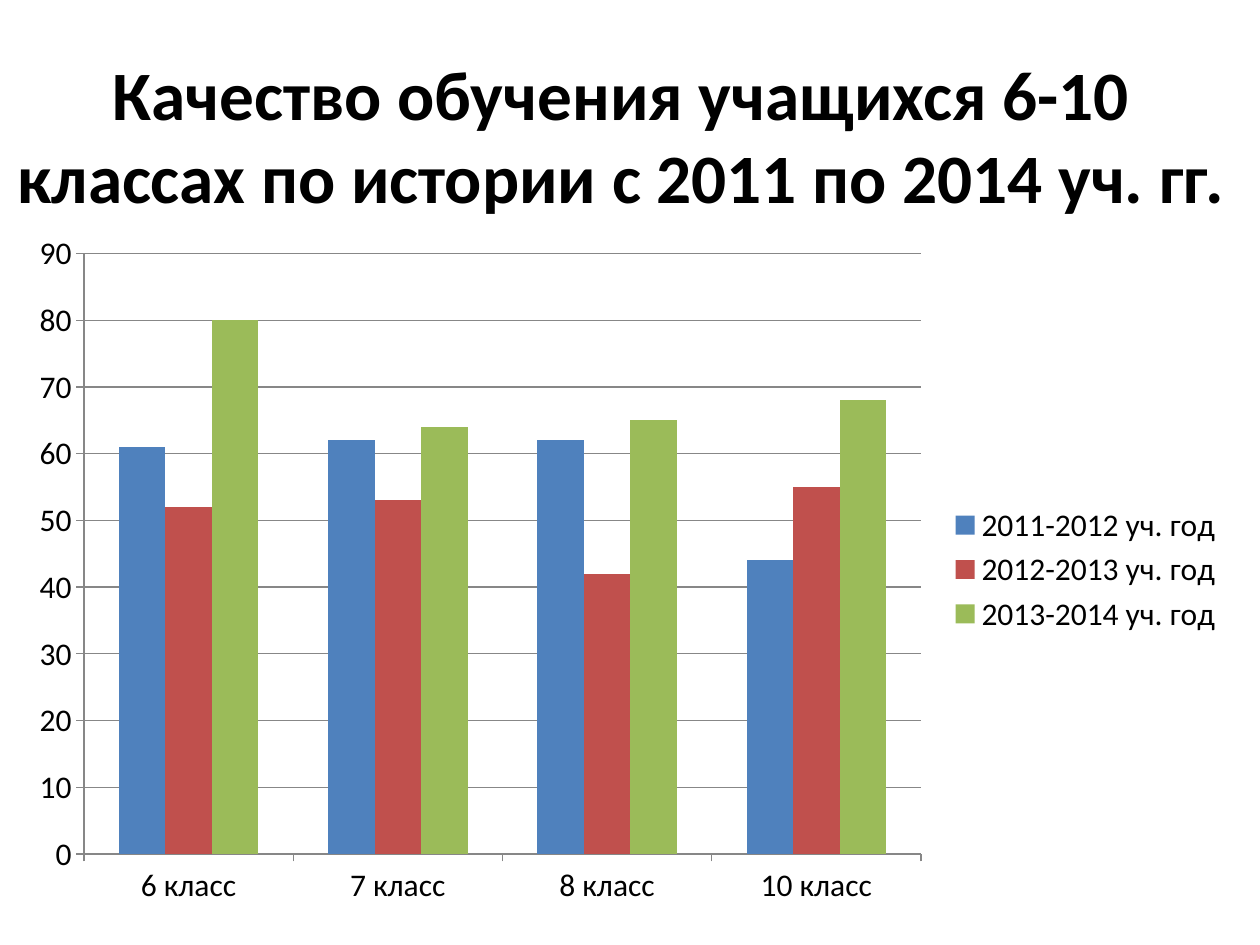
from pptx import Presentation
from pptx.chart.data import CategoryChartData
from pptx.dml.color import RGBColor
from pptx.enum.chart import XL_CHART_TYPE, XL_LEGEND_POSITION, XL_TICK_MARK
from pptx.enum.text import MSO_ANCHOR, PP_ALIGN
from pptx.util import Inches, Pt

BARS = XL_CHART_TYPE.COLUMN_CLUSTERED
RIGHT = XL_LEGEND_POSITION.RIGHT
OUT = XL_TICK_MARK.OUTSIDE
MID = MSO_ANCHOR.MIDDLE
CENTER = PP_ALIGN.CENTER

TITLE = "Качество обучения учащихся 6-10 классах по истории с 2011 по 2014 уч. гг."
GRADES = ["6 класс", "7 класс", "8 класс", "10 класс"]
YEARS = [
    ("2011-2012 уч. год", (61, 62, 62, 44), "blue"),
    ("2012-2013 уч. год", (52, 53, 42, 55), "red"),
    ("2013-2014 уч. год", (80, 64, 65, 68), "green"),
]
COLORS = {
    "blue": "4F81BD",
    "red": "C0504D",
    "green": "9BBB59",
    "text": "000000",
    "line": "878787",
}
FONT = "Calibri"
WIDE, HIGH = 10, 7.5
TITLE_BOX = (-0.01, 0.44, 9.88, 1.25)
CHART_BOX = (0.12, 1.75, 9.69, 5.54)


def color(name):
    return RGBColor.from_string(COLORS[name])


def style(font, size, bold=False):
    font.name = FONT
    font.size = Pt(size)
    font.bold = bold
    font.color.rgb = color("text")


def add_title(slide):
    box = slide.shapes.add_textbox(*map(Inches, TITLE_BOX))
    frame = box.text_frame
    frame.word_wrap = True
    frame.vertical_anchor = MID
    para = frame.paragraphs[0]
    para.alignment = CENTER
    run = para.add_run()
    run.text = TITLE
    style(run.font, 39.6, True)


def add_bars(slide):
    data = CategoryChartData()
    data.categories = GRADES
    for name, marks, _ in YEARS:
        data.add_series(name, marks)
    chart = slide.shapes.add_chart(BARS, *map(Inches, CHART_BOX), data).chart
    style(chart.font, 18)
    chart.has_title = False
    chart.has_legend = True
    chart.legend.position = RIGHT
    chart.legend.include_in_layout = False

    plot = chart.plots[0]
    plot.vary_by_categories = False
    plot.gap_width = 150
    plot.overlap = 0
    for bar, (_, _, tint) in zip(plot.series, YEARS):
        bar.format.fill.solid()
        bar.format.fill.fore_color.rgb = color(tint)

    scale = chart.value_axis
    scale.minimum_scale, scale.maximum_scale, scale.major_unit = 0, 90, 10
    scale.has_major_gridlines = True
    for axis in (chart.category_axis, scale):
        axis.major_tick_mark = OUT
    for part in (chart.category_axis, scale, scale.major_gridlines):
        part.format.line.color.rgb = color("line")
        part.format.line.width = Pt(0.75)


def main():
    deck = Presentation()
    deck.slide_width, deck.slide_height = Inches(WIDE), Inches(HIGH)
    slide = deck.slides.add_slide(deck.slide_layouts[6])
    add_title(slide)
    add_bars(slide)
    deck.save("out.pptx")


if __name__ == "__main__":
    main()
